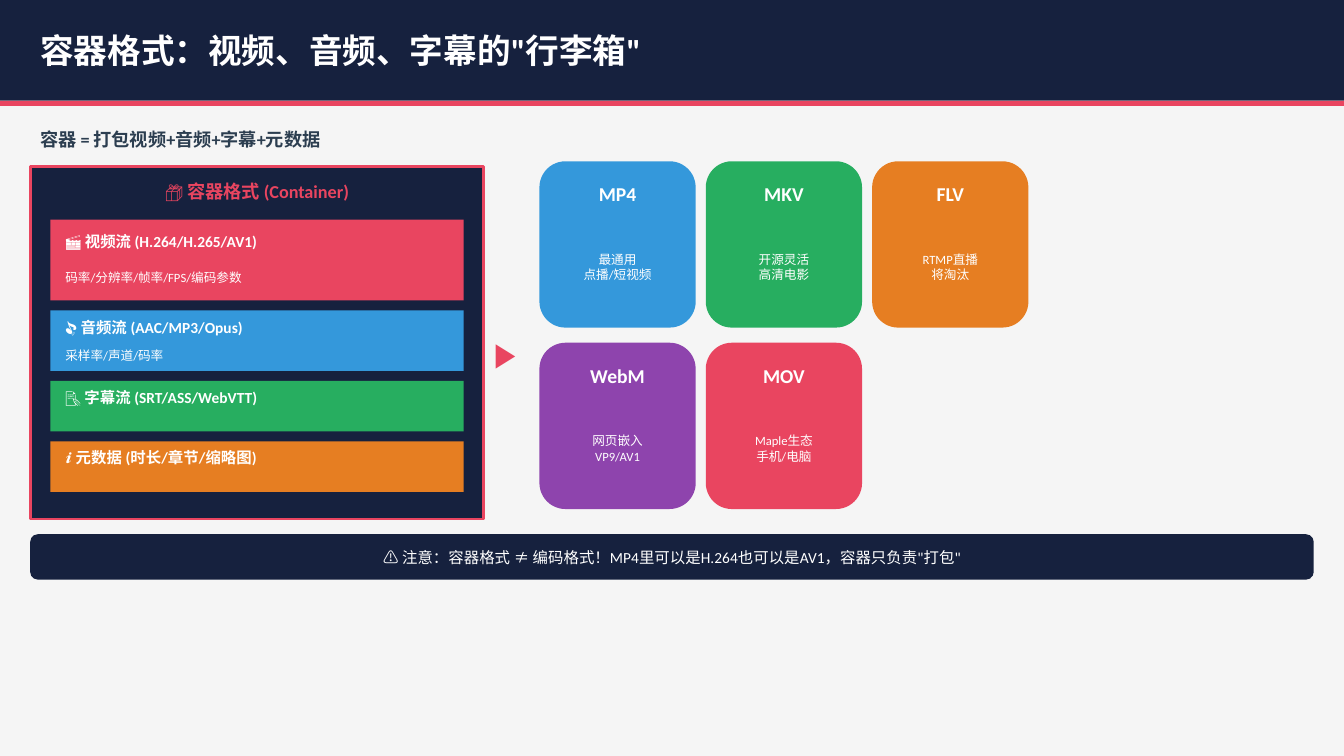
"""Build the slide on video container formats and the streams they hold."""
from pptx import Presentation
from pptx.dml.color import RGBColor
from pptx.enum.shapes import MSO_SHAPE
from pptx.enum.text import MSO_ANCHOR, PP_ALIGN
from pptx.util import Pt

PX = 9144
COLORS = {
    "navy": "16213E", "red": "E94560", "blue": "3498DB", "green": "27AE60",
    "orange": "E67E22", "purple": "8E44AD", "slate": "2C3E50",
    "white": "FFFFFF", "paper": "F5F5F5",
}

presentation = Presentation()
presentation.slide_width = 1333 * PX
presentation.slide_height = 750 * PX
slide = presentation.slides.add_slide(presentation.slide_layouts[6])
slide.background.fill.solid()
slide.background.fill.fore_color.rgb = RGBColor.from_string(COLORS["paper"])


def add_block(left, top, width, height, color, kind=MSO_SHAPE.RECTANGLE, border=None):
    shape = slide.shapes.add_shape(kind, left * PX, top * PX, width * PX, height * PX)
    shape.shadow.inherit = False
    shape.fill.solid()
    shape.fill.fore_color.rgb = RGBColor.from_string(COLORS[color])
    if border:
        shape.line.color.rgb = RGBColor.from_string(COLORS[border])
        shape.line.width = Pt(2)
    else:
        shape.line.fill.background()


def add_label(left, top, width, height, lines, size, color="white", bold=False,
              align=PP_ALIGN.LEFT):
    box = slide.shapes.add_textbox(left * PX, top * PX, width * PX, height * PX)
    frame = box.text_frame
    frame.word_wrap = True
    frame.vertical_anchor = MSO_ANCHOR.MIDDLE
    for index, line in enumerate(lines):
        paragraph = frame.add_paragraph() if index else frame.paragraphs[0]
        paragraph.alignment = align
        run = paragraph.add_run()
        run.text = line
        run.font.name = "Calibri"
        run.font.size = Pt(size)
        run.font.bold = bold
        run.font.color.rgb = RGBColor.from_string(COLORS[color])
    return frame


add_block(0, 0, 1333, 100, "navy")
add_block(0, 100, 1333, 5, "red")
title = add_label(40, 15, 1253, 70, ['容器格式：视频、音频、字幕的"行李箱"'], 24, bold=True)
title.margin_left = title.margin_right = title.margin_top = title.margin_bottom = 0
add_label(30, 122, 1273, 32, ["容器 = 打包视频+音频+字幕+元数据"], 13, "slate", True)

add_block(30, 165, 450, 350, "navy", border="red")
add_label(35, 170, 440, 40, ["📦 容器格式 (Container)"], 13, "red", True, PP_ALIGN.CENTER)

streams = [
    ("🎬 视频流 (H.264/H.265/AV1)", "码率/分辨率/帧率/FPS/编码参数", "red", 80, 38, 35),
    ("🎵 音频流 (AAC/MP3/Opus)", "采样率/声道/码率", "blue", 60, 30, 25),
    ("📝 字幕流 (SRT/ASS/WebVTT)", None, "green", 50, 28, 0),
    ("ℹ️ 元数据 (时长/章节/缩略图)", None, "orange", 50, 28, 0),
]
stream_top = 218
for name, detail, color, height, name_height, detail_height in streams:
    add_block(50, stream_top, 410, height, color)
    add_label(55, stream_top + 2, 400, name_height, [name], 11, bold=True)
    if detail:
        add_label(55, stream_top + 2 + name_height, 400, detail_height, [detail], 9)
    stream_top += height + 10

add_label(480, 330, 40, 40, ["▶"], 24, "red", align=PP_ALIGN.CENTER)

formats = [
    ("MP4", ["最通用", "点播/短视频"], "blue"),
    ("MKV", ["开源灵活", "高清电影"], "green"),
    ("FLV", ["RTMP直播", "将淘汰"], "orange"),
    ("WebM", ["网页嵌入", "VP9/AV1"], "purple"),
    ("MOV", ["Maple生态", "手机/电脑"], "red"),
]
for index, (name, uses, color) in enumerate(formats):
    row, column = divmod(index, 3)
    left, top = 535 + column * 165, 160 + row * 180
    add_block(left, top, 155, 165, color, MSO_SHAPE.ROUNDED_RECTANGLE)
    add_label(left, top + 10, 155, 45, [name], 14, bold=True, align=PP_ALIGN.CENTER)
    add_label(left + 5, top + 55, 145, 100, uses, 9, align=PP_ALIGN.CENTER)

add_block(30, 530, 1273, 45, "navy", MSO_SHAPE.ROUNDED_RECTANGLE)
add_label(35, 533, 1263, 40,
          ['⚠️ 注意：容器格式 ≠ 编码格式！MP4里可以是H.264也可以是AV1，容器只负责"打包"'],
          11, align=PP_ALIGN.CENTER)

presentation.save("out.pptx")
